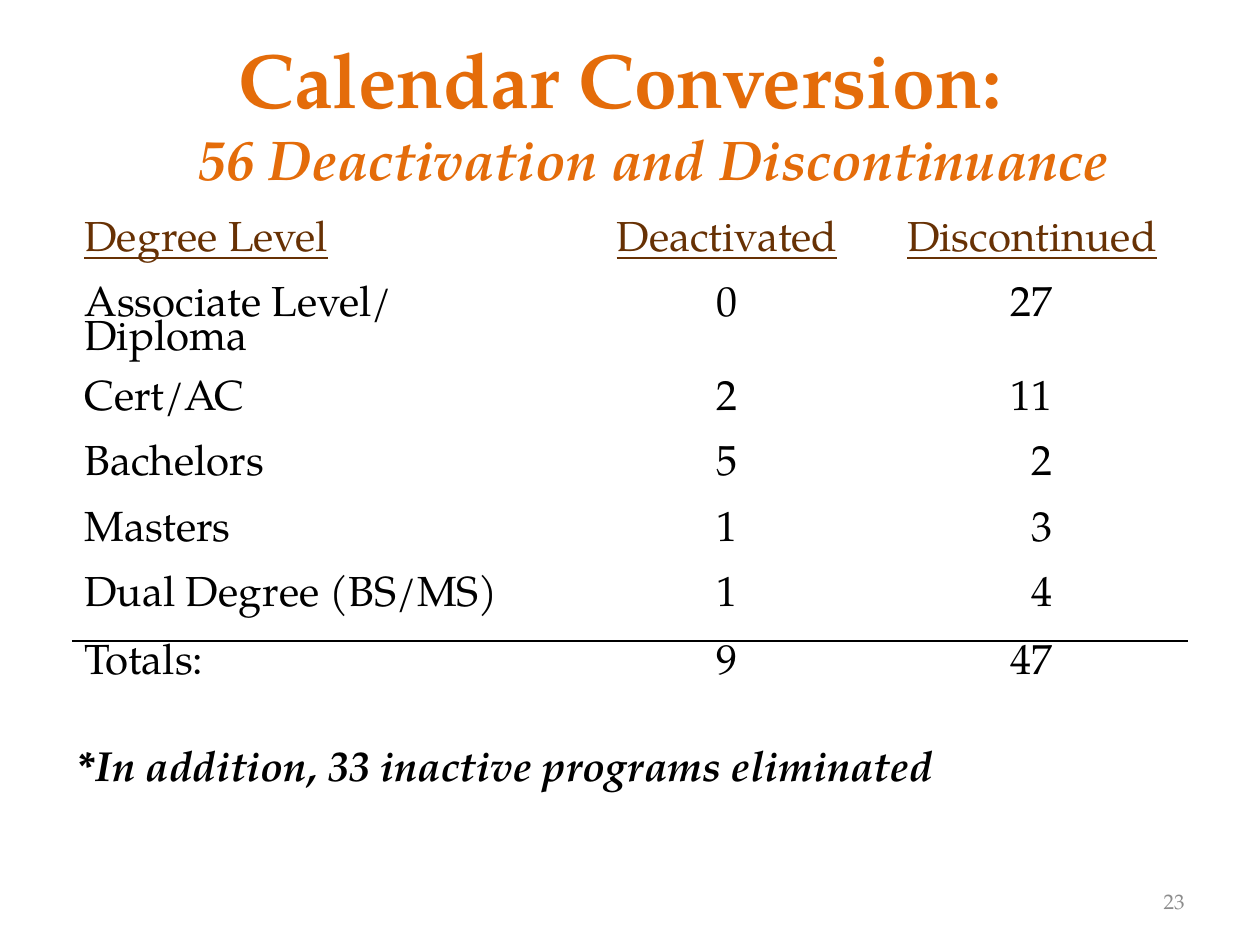
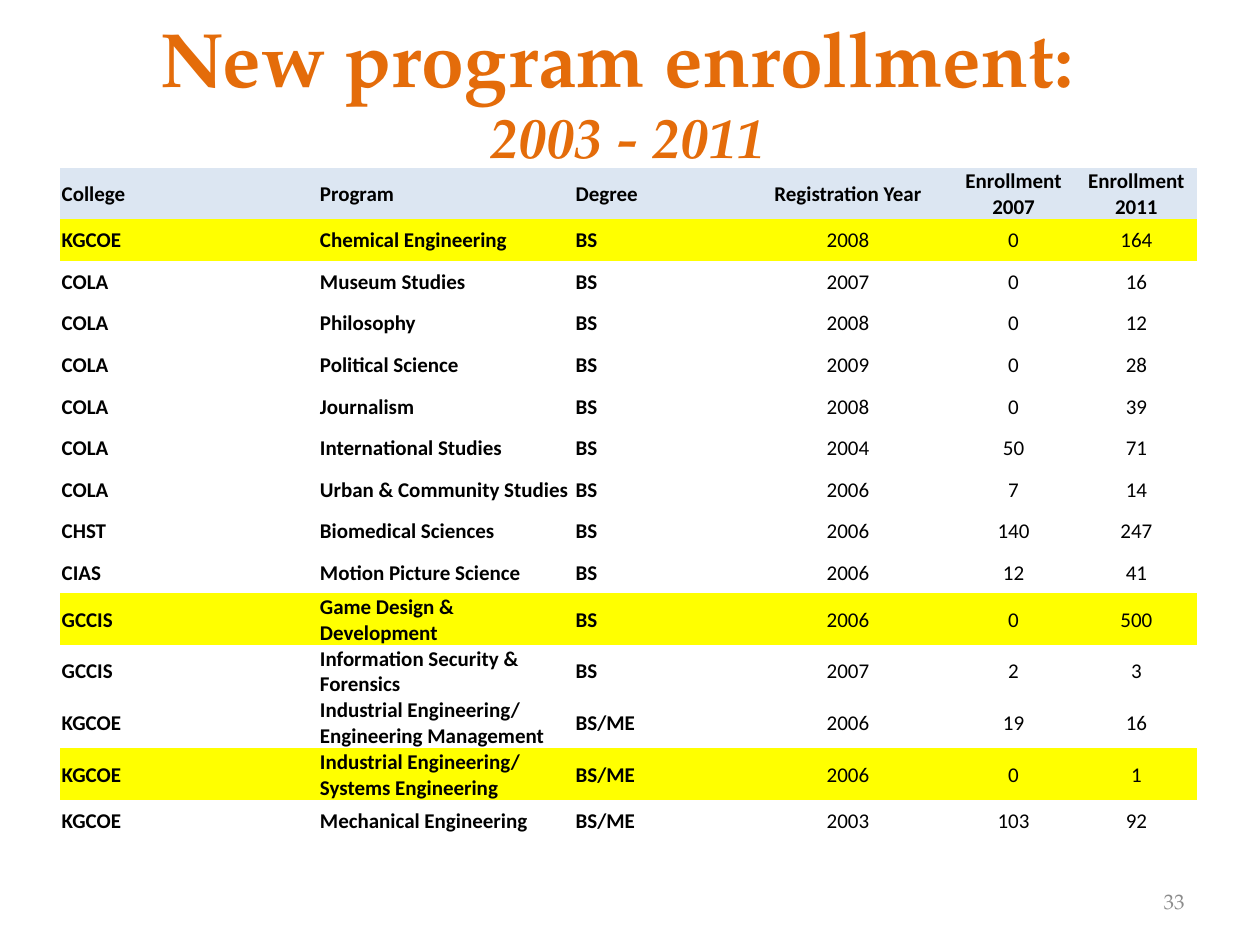
"""Build two slides on degree programs: closures and new enrollment."""
from lxml import etree
from pptx import Presentation
from pptx.dml.color import RGBColor
from pptx.enum import text as t
from pptx.oxml import ns
from pptx.util import Inches, Pt

SERIF, SANS = "TeX Gyre Pagella", "Calibri"
ORANGE, BROWN, BLACK, GRAY = "E46C0A", "673104", "000000", "8C8C8C"
PALE, YELLOW = "DCE6F2", "FFFF00"
LEFT, MID, RIGHT = t.PP_ALIGN.LEFT, t.PP_ALIGN.CENTER, t.PP_ALIGN.RIGHT
PLAIN = "{2D5ABB26-0587-4C30-8999-92F81FD0307C}"

LEVELS = [
    ("Degree Level", "Deactivated", "Discontinued"),
    ("Associate Level/ Diploma", "0", "27"),
    ("Cert/AC", "2", "11"),
    ("Bachelors", "5", "2"),
    ("Masters", "1", "3"),
    ("Dual Degree (BS/MS)", "1", "4"),
    ("Totals:", "9", "47"),
]
PROGRAMS = [
    ("College", "Program", "Degree", "Registration Year",
     "Enrollment 2007", "Enrollment 2011"),
    ("KGCOE", "Chemical Engineering", "BS", "2008", "0", "164"),
    ("COLA", "Museum Studies", "BS", "2007", "0", "16"),
    ("COLA", "Philosophy", "BS", "2008", "0", "12"),
    ("COLA", "Political Science", "BS", "2009", "0", "28"),
    ("COLA", "Journalism", "BS", "2008", "0", "39"),
    ("COLA", "International Studies", "BS", "2004", "50", "71"),
    ("COLA", "Urban & Community Studies", "BS", "2006", "7", "14"),
    ("CHST", "Biomedical Sciences", "BS", "2006", "140", "247"),
    ("CIAS", "Motion Picture Science", "BS", "2006", "12", "41"),
    ("GCCIS", "Game Design & Development", "BS", "2006", "0", "500"),
    ("GCCIS", "Information Security & Forensics", "BS", "2007", "2", "3"),
    ("KGCOE", "Industrial Engineering/ Engineering Management", "BS/ME",
     "2006", "19", "16"),
    ("KGCOE", "Industrial Engineering/ Systems Engineering", "BS/ME",
     "2006", "0", "1"),
    ("KGCOE", "Mechanical Engineering", "BS/ME", "2003", "103", "92"),
]
MARKED = {1, 10, 13}


def color(code):
    """Turn a hex string into a colour."""
    return RGBColor.from_string(code)


def style(run, size, code=BLACK, face=SERIF, bold=False, italic=False):
    """Set the font of a run."""
    font = run.font
    font.name, font.size = face, Pt(size)
    font.bold, font.italic = bold, italic
    font.color.rgb = color(code)


def add_title(slide, head, sub, box, hang=0):
    """Fill the title with a heading and an italic second line."""
    title = slide.shapes.title
    title.left, title.top, title.width, title.height = map(Inches, box)
    frame = title.text_frame
    frame.auto_size = t.MSO_AUTO_SIZE.NONE
    frame.vertical_anchor = t.MSO_ANCHOR.MIDDLE
    para = frame.paragraphs[0]
    para.text = f"{head} \v{sub}"
    para.alignment = MID
    props = para._p.get_or_add_pPr()
    props.set("marL", str(Inches(hang)))
    props.set("indent", str(-Inches(hang)))
    first, last = para.runs
    style(first, 44, ORANGE, bold=True)
    style(last, 32, ORANGE, bold=True, italic=True)


def add_text(slide, words, box, align=LEFT, **look):
    """Add a text box of one line and return its frame."""
    frame = slide.shapes.add_textbox(*map(Inches, box)).text_frame
    frame.word_wrap = True
    para = frame.paragraphs[0]
    para.text = words
    para.alignment = align
    style(para.runs[0], **look)
    return frame


def add_page(slide, number):
    """Add the page number at the lower right."""
    frame = add_text(slide, number, (7.17, 6.95, 2.33, 0.4), RIGHT,
                     size=12, code=GRAY)
    frame.vertical_anchor = t.MSO_ANCHOR.MIDDLE


def add_grid(slide, rows, spot, widths, heights):
    """Add an unstyled table of the given sizes."""
    box = (*spot, sum(widths), sum(heights))
    grid = slide.shapes.add_table(len(rows), len(widths),
                                  *map(Inches, box)).table
    grid.first_row = grid.horz_banding = False
    grid._tbl.tblPr.find(ns.qn("a:tableStyleId")).text = PLAIN
    for col, width in zip(grid.columns, widths):
        col.width = Inches(width)
    for row, height in zip(grid.rows, heights):
        row.height = Inches(height)
    return grid


def fill_cell(cell, words, align, fill=None, **look):
    """Write one table cell and return its paragraph."""
    if fill:
        cell.fill.solid()
        cell.fill.fore_color.rgb = color(fill)
    else:
        cell.fill.background()
    para = cell.text_frame.paragraphs[0]
    para.text = words
    para.alignment = align
    style(para.runs[0], **look)
    return para


def add_rule(cell, side):
    """Draw a black line on one side of a cell."""
    line = etree.Element(ns.qn(f"a:{side}"), w=str(Pt(1)))
    solid = etree.SubElement(line, ns.qn("a:solidFill"))
    etree.SubElement(solid, ns.qn("a:srgbClr"), val=BLACK)
    cell._tc.get_or_add_tcPr().insert(0, line)


def add_levels(slide):
    """Add the table of closures by degree level."""
    heights = [0.52, 0.58, 0.52, 0.52, 0.52, 0.54, 0.52]
    grid = add_grid(slide, LEVELS, (0.57, 1.73), (4.02, 2.36, 2.48), heights)
    total = len(LEVELS) - 1
    for r, row in enumerate(LEVELS):
        for c, words in enumerate(row):
            cell = grid.cell(r, c)
            align = (LEFT, MID, RIGHT if r else MID)[c]
            para = fill_cell(cell, words, align, size=24,
                             code=BLACK if r else BROWN)
            para.line_spacing = 0.8
            para.runs[0].font.underline = r == 0
            if c == 0:
                cell.margin_right = Inches(0.3)
            if align == RIGHT:
                cell.margin_right = Inches(1.08)
            if r == total - 1:
                add_rule(cell, "lnB")
            if r == total:
                add_rule(cell, "lnT")


def add_programs(slide):
    """Add the table of new programs."""
    widths = (2.05, 2.03, 1.35, 1.64, 0.99, 0.96)
    grid = add_grid(slide, PROGRAMS, (0.48, 1.33), widths,
                    [0.33] * len(PROGRAMS))
    for r, row in enumerate(PROGRAMS):
        fill = PALE if r == 0 else YELLOW if r in MARKED else None
        for c, words in enumerate(row):
            cell = grid.cell(r, c)
            fill_cell(cell, words, LEFT if c < 3 else MID, fill, size=12,
                      face=SANS, bold=r == 0 or c < 3)
            cell.vertical_anchor = t.MSO_ANCHOR.MIDDLE
            cell.margin_left = cell.margin_right = Inches(0.01)
            cell.margin_top, cell.margin_bottom = Inches(0.01), 0


def main():
    """Build and save the deck."""
    deck = Presentation()
    deck.slide_width, deck.slide_height = Inches(10), Inches(7.5)
    layout = deck.slide_layouts[5]

    slide = deck.slides.add_slide(layout)
    add_title(slide, "Calendar Conversion:",
              "56 Deactivation and Discontinuance", (0.5, 0.3, 9, 1.17), 0.38)
    add_page(slide, "23")
    add_levels(slide)
    note = add_text(slide, "*In addition, 33 inactive programs eliminated",
                    (0.33, 5.82, 9.09, 0.5), size=24, bold=True, italic=True)
    note.margin_left = Inches(0.29)

    slide = deck.slides.add_slide(layout)
    add_title(slide, "New program enrollment:", "2003 - 2011",
              (0.48, 0.24, 9, 0.95))
    add_page(slide, "33")
    add_programs(slide)

    deck.save("out.pptx")


if __name__ == "__main__":
    main()
